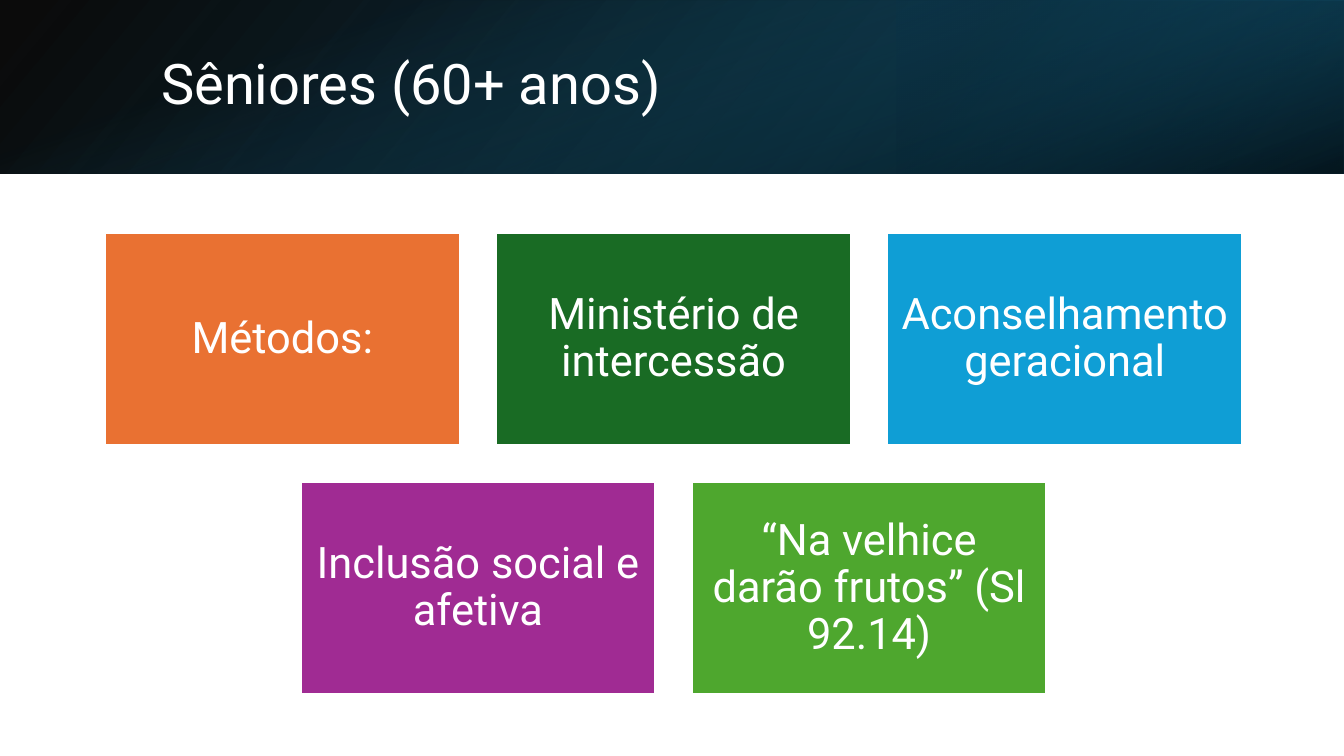
from pptx import Presentation
from pptx.dml.color import RGBColor
from pptx.enum.shapes import MSO_SHAPE as SHAPE
from pptx.enum.text import MSO_ANCHOR as ANCHOR, PP_ALIGN as ALIGN
from pptx.oxml import parse_xml
from pptx.oxml.ns import nsdecls, qn
from pptx.util import Inches, Pt

# Content
TITLE = "Sêniores (60+ anos)"
ROWS = [
    [("Métodos:", "E97132"),
     ("Ministério de intercessão", "196B24"),
     ("Aconselhamento geracional", "0F9ED5")],
    [("Inclusão social e afetiva", "A02B93"),
     ("“Na velhice darão frutos” (Sl 92.14)", "4EA72E")],
]
# Banner layers: box, rotation, flipped, angle, stops (position, colour, opacity)
BANNER = [
    ((0, 0, 13.33, 1.72), 0, True, 140,
     [(0, "000000", 96), (100, "104862", 100)]),
    ((8.89, 0, 4.44, 1.72), 180, True, 320,
     [(19, "0B3041", 68), (100, "156082", 79)]),
    ((5.8, -5.8, 1.72, 13.33), 90, False, 340,
     [(23, "156082", 0), (99, "000000", 74)]),
]
FONT, WHITE = "Roboto", "FFFFFF"
TILE_W, TILE_H, GAP = 3.52, 2.11, 0.36
TILES_TOP, TILES_CENTER = 2.31, 6.68


def rgb(value):
    return RGBColor.from_string(value)


def add_rect(s, box):
    sp = s.shapes.add_shape(SHAPE.RECTANGLE, *map(Inches, box))
    sp.shadow.inherit = False
    return sp


def set_gradient(sp, angle, stops):
    marks = "".join(
        f'<a:gs pos="{pos * 1000}"><a:srgbClr val="{color}">'
        f'<a:alpha val="{opacity * 1000}"/></a:srgbClr></a:gs>'
        for pos, color, opacity in stops)
    grad = parse_xml(
        f'<a:gradFill {nsdecls("a")} rotWithShape="1"><a:gsLst>{marks}</a:gsLst>'
        f'<a:lin ang="{angle * 60000}" scaled="0"/></a:gradFill>')
    sp.fill.background()
    spPr = sp._element.spPr
    spPr.replace(spPr.find(qn("a:noFill")), grad)


def write(tf, text, size, align):
    tf.word_wrap = True
    tf.vertical_anchor = ANCHOR.MIDDLE
    tf.text = text
    p = tf.paragraphs[0]
    p.alignment = align
    p.line_spacing = 0.9
    font = p.runs[0].font
    font.name, font.size, font.color.rgb = FONT, Pt(size), rgb(WHITE)


prs = Presentation()
prs.slide_width, prs.slide_height = Inches(13.33), Inches(7.5)
s = prs.slides.add_slide(prs.slide_layouts[6])

# Banner
for box, rotation, flipped, angle, stops in BANNER:
    sp = add_rect(s, box)
    sp.line.fill.background()
    sp.rotation = rotation
    if flipped:
        sp._element.spPr.find(qn("a:xfrm")).set("flipH", "1")
    set_gradient(sp, angle, stops)

# Title
title = s.shapes.add_textbox(Inches(1.5), Inches(0.38), Inches(10.98), Inches(0.96))
write(title.text_frame, TITLE, 40, ALIGN.LEFT)

# Tiles, each row centred
for i, row in enumerate(ROWS):
    row_w = len(row) * (TILE_W + GAP) - GAP
    top = TILES_TOP + i * (TILE_H + GAP)
    for j, (text, color) in enumerate(row):
        left = TILES_CENTER - row_w / 2 + j * (TILE_W + GAP)
        sp = add_rect(s, (left, top, TILE_W, TILE_H))
        sp.fill.solid()
        sp.fill.fore_color.rgb = rgb(color)
        sp.line.color.rgb = rgb(WHITE)
        sp.line.width = Pt(1.5)
        tf = sp.text_frame
        tf.margin_left = tf.margin_right = Inches(0.13)
        tf.margin_top = tf.margin_bottom = Inches(0.13)
        write(tf, text, 31, ALIGN.CENTER)

prs.save("out.pptx")
